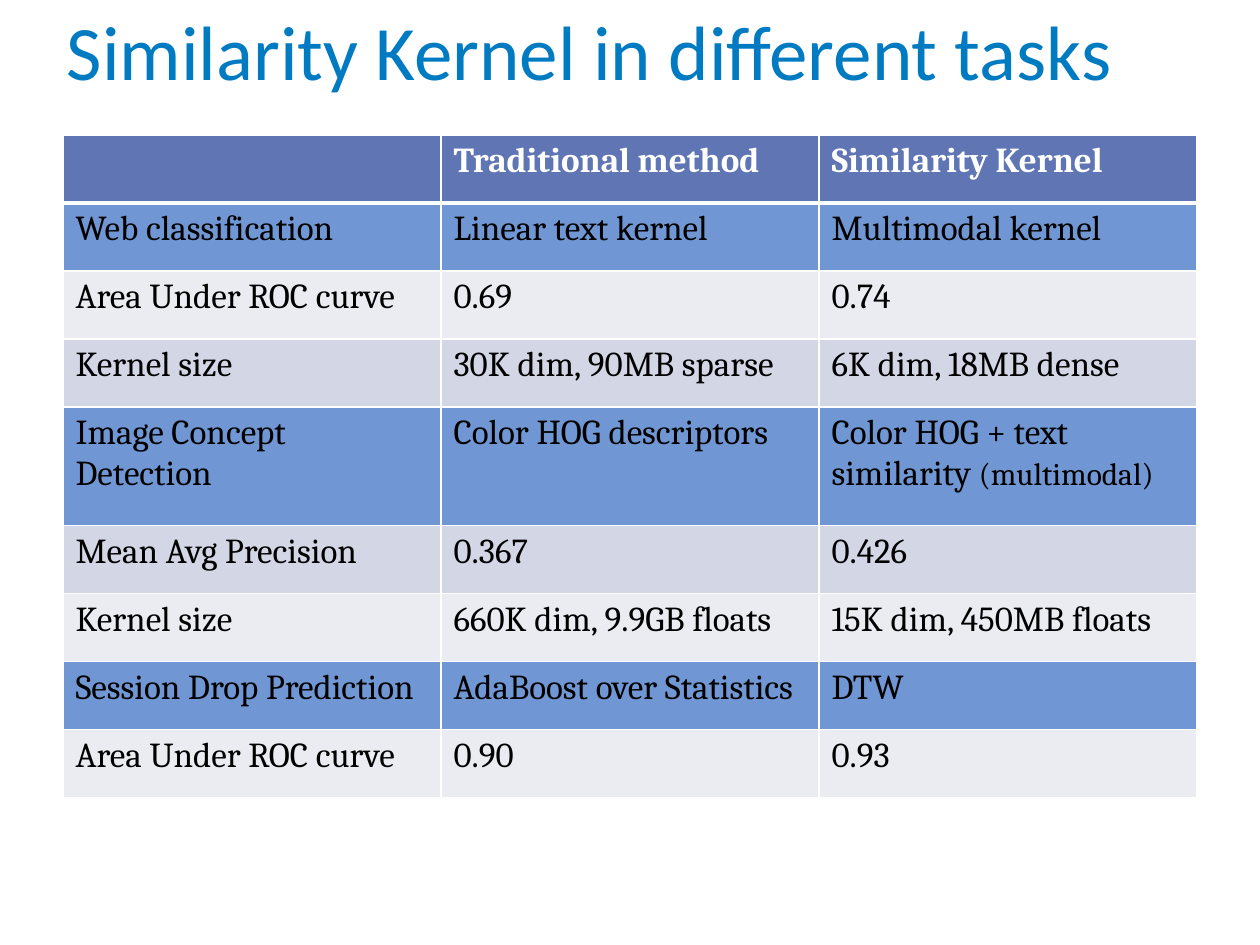
"""Build the slide that compares similarity kernels with traditional methods."""
from lxml.etree import SubElement
from pptx import Presentation
from pptx.dml.color import RGBColor
from pptx.enum.text import MSO_ANCHOR, MSO_AUTO_SIZE, PP_ALIGN
from pptx.oxml.ns import qn
from pptx.util import Inches, Pt

COLORS = {
    "title": "007BC2",
    "header": "6076B4",
    "task": "7097D3",
    "light": "EAECF2",
    "dark": "D2D6E5",
    "white": "FFFFFF",
    "black": "000000",
}
ROWS = [
    ("header", "", "Traditional method", "Similarity Kernel"),
    ("task", "Web classification", "Linear text kernel", "Multimodal kernel"),
    ("light", "Area Under ROC curve", "0.69", "0.74"),
    ("dark", "Kernel size", "30K dim, 90MB sparse", "6K dim, 18MB dense"),
    ("task", "Image Concept Detection", "Color HOG descriptors",
     "Color HOG + text similarity |(multimodal)"),
    ("dark", "Mean Avg Precision", "0.367", "0.426"),
    ("light", "Kernel size", "660K dim, 9.9GB floats", "15K dim, 450MB floats"),
    ("task", "Session Drop Prediction", "AdaBoost over Statistics", "DTW"),
    ("light", "Area Under ROC curve", "0.90", "0.93"),
]
COLUMN_WIDTH = Inches(3)
ROW_HEIGHT = Inches(0.54)
TALL_ROW_HEIGHT = Inches(0.94)
TALL_ROW = 4
RUN_SIZES = (20, 18)


def add_span(para, text, font_name, size, color, bold=False):
    span = para.add_run()
    span.text = text
    span.font.name = font_name
    span.font.size = Pt(size)
    span.font.bold = bold
    span.font.color.rgb = RGBColor.from_string(COLORS[color])


def add_border(cell, side, width):
    line = SubElement(cell._tc.get_or_add_tcPr(), qn(f"a:ln{side}"), w=str(Pt(width)))
    fill = SubElement(line, qn("a:solidFill"))
    SubElement(fill, qn("a:srgbClr"), val=COLORS["white"])


deck = Presentation()
deck.slide_width = Inches(10)
deck.slide_height = Inches(7.5)
page = deck.slides.add_slide(deck.slide_layouts[5])

title = page.shapes.title
title.left, title.top = Inches(0.43), Inches(0.01)
title.width, title.height = Inches(9.13), Inches(0.8)
title.text_frame.auto_size = MSO_AUTO_SIZE.NONE
title.text_frame.vertical_anchor = MSO_ANCHOR.BOTTOM
heading = title.text_frame.paragraphs[0]
heading.alignment = PP_ALIGN.LEFT
heading.line_spacing = Pt(58)
add_span(heading, "Similarity Kernel in different tasks", "Calibri", 44, "title")

column_count = len(ROWS[0]) - 1
table_height = ROW_HEIGHT * (len(ROWS) - 1) + TALL_ROW_HEIGHT
table = page.shapes.add_table(
    len(ROWS), column_count, Inches(0.5), Inches(1.07),
    COLUMN_WIDTH * column_count, table_height,
).table
for column in table.columns:
    column.width = COLUMN_WIDTH

for row_index, (kind, *texts) in enumerate(ROWS):
    is_header = kind == "header"
    table.rows[row_index].height = TALL_ROW_HEIGHT if row_index == TALL_ROW else ROW_HEIGHT
    for column_index, text in enumerate(texts):
        cell = table.cell(row_index, column_index)
        for side in "LRTB":
            under_header = (row_index, side) in ((0, "B"), (1, "T"))
            add_border(cell, side, 3 if under_header else 1)
        cell.fill.solid()
        cell.fill.fore_color.rgb = RGBColor.from_string(COLORS[kind])
        if text:
            para = cell.text_frame.paragraphs[0]
            for part, size in zip(text.split("|"), RUN_SIZES):
                add_span(para, part, "Cambria", size, "white" if is_header else "black", is_header)

deck.save("out.pptx")
